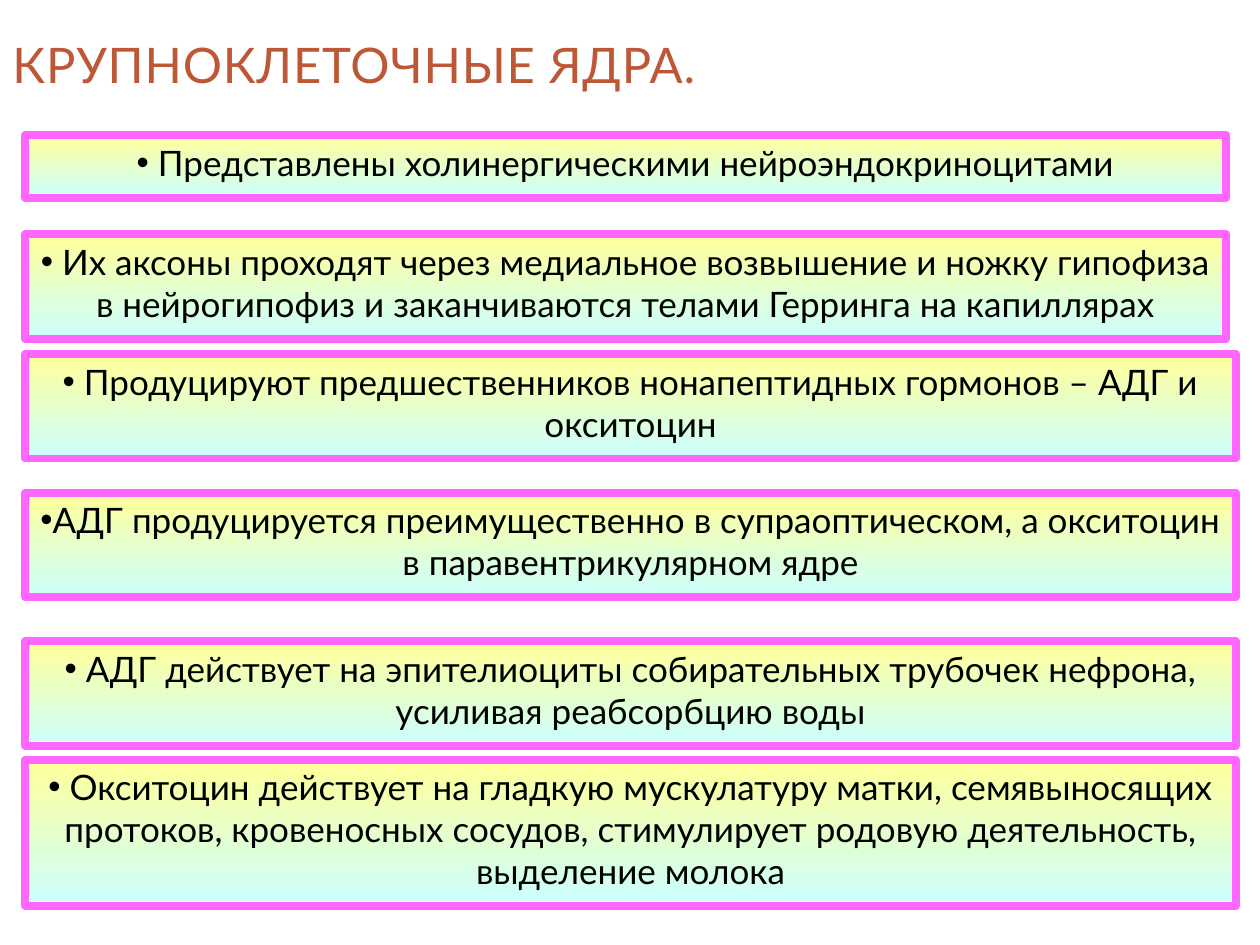
from lxml import etree
from pptx import Presentation
from pptx.dml.color import RGBColor
from pptx.enum.shapes import MSO_SHAPE
from pptx.enum.text import MSO_ANCHOR, MSO_AUTO_SIZE, PP_ALIGN
from pptx.oxml.ns import qn
from pptx.util import Inches, Pt

RECTANGLE = MSO_SHAPE.RECTANGLE
MIDDLE, TOP = MSO_ANCHOR.MIDDLE, MSO_ANCHOR.TOP
CENTER = PP_ALIGN.CENTER
GROW = MSO_AUTO_SIZE.SHAPE_TO_FIT_TEXT

FONT = "Lato"
COLORS = {
    "title_light": "BD5836",
    "title_dark": "893D23",
    "box_top": "FFFF99",
    "box_bottom": "CCFFFF",
    "border": "FF66FF",
    "text": "000000",
}
BOX_LEFT = 0.2
NARROW, WIDE = 9.53, 9.61
ONE_LINE, TWO_LINES, THREE_LINES = 0.5, 0.83, 1.16

# top, width, height, text
FACTS = [
    (1.07, NARROW, ONE_LINE,
     " Представлены холинергическими нейроэндокриноцитами"),
    (1.86, NARROW, TWO_LINES,
     " Их аксоны проходят через медиальное возвышение и ножку гипофиза "
     "в нейрогипофиз и заканчиваются телами Герринга на капиллярах"),
    (2.81, WIDE, TWO_LINES,
     " Продуцируют предшественников нонапептидных гормонов – АДГ и окситоцин"),
    (3.91, WIDE, TWO_LINES,
     "АДГ продуцируется преимущественно в супраоптическом, "
     "а окситоцин в паравентрикулярном ядре"),
    (5.09, WIDE, TWO_LINES,
     " АДГ действует на эпителиоциты собирательных трубочек нефрона, "
     "усиливая реабсорбцию воды"),
    (6.03, WIDE, THREE_LINES,
     " Окситоцин действует на гладкую мускулатуру матки, семявыносящих "
     "протоков, кровеносных сосудов, стимулирует родовую деятельность, "
     "выделение молока"),
]


def rgb(name):
    return RGBColor.from_string(COLORS[name])


def fill_downwards(fill, first, last, start=0):
    """Vertical gradient from first to last, beginning at the fraction start."""
    fill.gradient()
    fill.gradient_angle = 270
    for stop, color, position in zip(fill.gradient_stops, (first, last), (start, 1)):
        stop.color.rgb = rgb(color)
        stop.position = position


def add_bullet(paragraph):
    """Bullet without indent, and half a line of space before."""
    properties = paragraph._p.get_or_add_pPr()
    properties.set("marL", "0")
    properties.set("indent", "0")
    space = etree.SubElement(properties, qn("a:spcBef"))
    etree.SubElement(space, qn("a:spcPct"), val="50000")
    etree.SubElement(properties, qn("a:buFont"), typeface="Arial")
    etree.SubElement(properties, qn("a:buChar"), char="•")


def write_text(frame, text, size, anchor):
    frame.word_wrap = True
    frame.vertical_anchor = anchor
    paragraph = frame.paragraphs[0]
    run = paragraph.add_run()
    run.text = text
    run.font.name = FONT
    run.font.size = Pt(size)
    return paragraph, run


def add_title(slide, text):
    title = slide.shapes.add_textbox(Inches(0), Inches(0.16), Inches(7.11), Inches(0.7))
    _, run = write_text(title.text_frame, text, 28, MIDDLE)
    fill_downwards(run.font.fill, "title_light", "title_dark", 0.25)
    run.font._element.set("spc", "50")


def add_fact(slide, top, width, height, text):
    box = slide.shapes.add_shape(
        RECTANGLE, Inches(BOX_LEFT), Inches(top), Inches(width), Inches(height))
    box.shadow.inherit = False
    fill_downwards(box.fill, "box_top", "box_bottom")
    box.line.color.rgb = rgb("border")
    box.line.width = Pt(4.5)
    paragraph, run = write_text(box.text_frame, text, 20, TOP)
    box.text_frame.auto_size = GROW
    run.font.color.rgb = rgb("text")
    paragraph.alignment = CENTER
    add_bullet(paragraph)


def main():
    deck = Presentation()
    deck.slide_width, deck.slide_height = Inches(10), Inches(7.5)
    slide = deck.slides.add_slide(deck.slide_layouts[6])
    add_title(slide, "КРУПНОКЛЕТОЧНЫЕ ЯДРА.")
    for fact in FACTS:
        add_fact(slide, *fact)
    deck.save("out.pptx")


if __name__ == "__main__":
    main()
